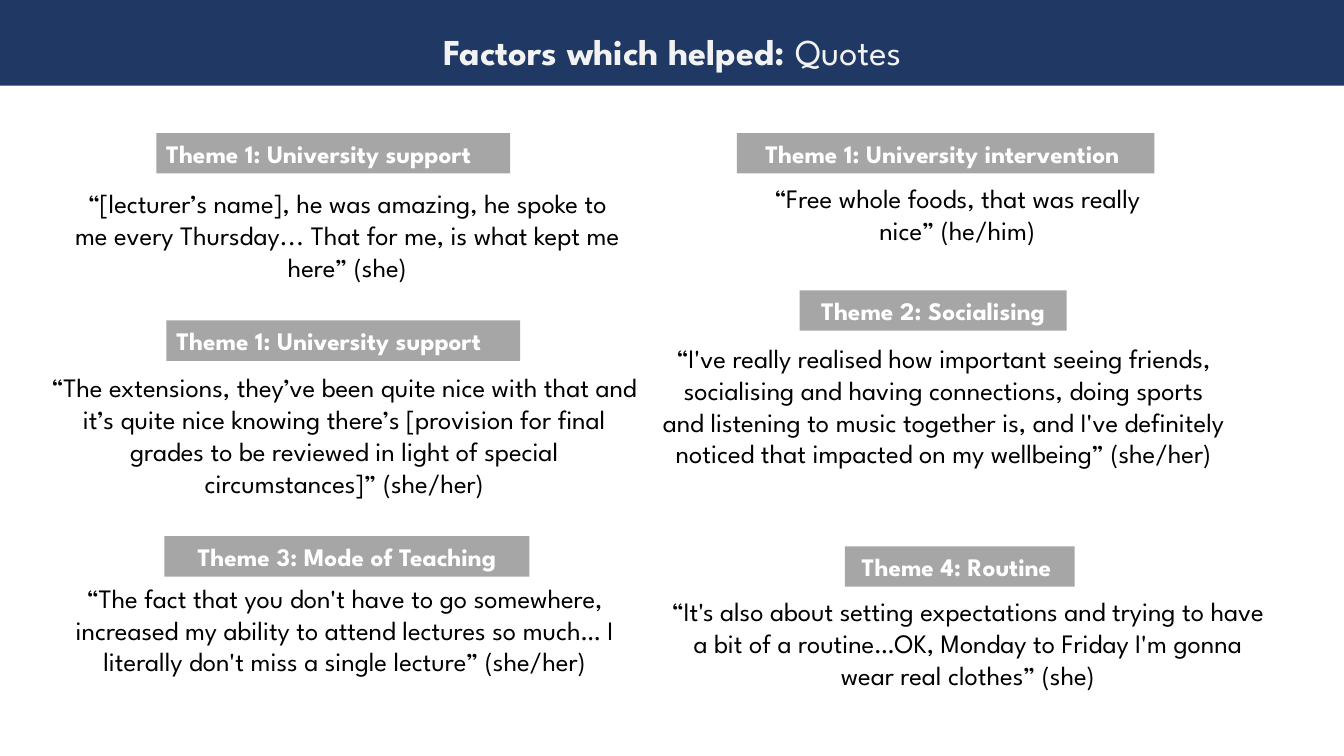
from pptx import Presentation
from pptx.dml.color import RGBColor
from pptx.enum.shapes import MSO_SHAPE
from pptx.enum.text import MSO_ANCHOR, MSO_AUTO_SIZE, PP_ALIGN
from pptx.util import Inches, Pt

RECTANGLE = MSO_SHAPE.RECTANGLE
TOP = MSO_ANCHOR.TOP
NO_AUTOFIT = MSO_AUTO_SIZE.NONE
LEFT, CENTER = PP_ALIGN.LEFT, PP_ALIGN.CENTER

NAVY = RGBColor(0x20, 0x38, 0x64)
GREY = RGBColor(0xA6, 0xA6, 0xA6)
PALE = RGBColor(0xF2, 0xF2, 0xF2)
WHITE = RGBColor(0xFF, 0xFF, 0xFF)
BLACK = RGBColor(0x00, 0x00, 0x00)
FONT = "League Spartan"


def write(frame, text, size, color, bold=False, align=CENTER, indent=0, after=0):
    frame.word_wrap = True
    frame.auto_size = NO_AUTOFIT
    frame.vertical_anchor = TOP
    paragraph = frame.paragraphs[0]
    paragraph.alignment = align
    paragraph.space_after = Pt(after)
    if indent:
        paragraph._p.get_or_add_pPr().set("marL", str(Inches(indent)))
    run = paragraph.add_run()
    run.text = text
    run.font.name = FONT
    run.font.size = Pt(size)
    run.font.bold = bold
    run.font.color.rgb = color


def add_block(left, top, width, height, fill):
    block = slide.shapes.add_shape(
        RECTANGLE, Inches(left), Inches(top), Inches(width), Inches(height))
    block.shadow.inherit = False
    block.fill.solid()
    block.fill.fore_color.rgb = fill
    block.line.fill.background()
    return block


prs = Presentation()
prs.slide_width = Inches(13.33)
prs.slide_height = Inches(7.5)
slide = prs.slides.add_slide(prs.slide_layouts[5])

title = slide.shapes.title
title.left, title.top = Inches(-0.35), Inches(0.24)
title.width, title.height = Inches(14.04), Inches(0.54)
write(title.text_frame, "Factors which helped: ", 26, PALE, bold=True)
write(title.text_frame, "Quotes", 26, PALE)

header_band = add_block(0, -0.14, 13.33, 0.99, NAVY)
title.element.addprevious(header_band.element)

themes = [
    ("Theme 1: University support", (1.55, 1.32, 3.51), LEFT,
     "“[lecturer’s name], he was amazing, he spoke to me every Thursday... "
     "That for me, is what kept me here” (she)",
     (0.11, 1.81, 6.18, 1.06), 0.49),
    ("Theme 1: University support", (1.65, 3.18, 3.51), LEFT,
     "“The extensions, they’ve been quite nice with that and it’s quite nice "
     "knowing there’s [provision for final grades to be reviewed in light of "
     "special circumstances]” (she/her)",
     (-0.11, 3.63, 6.56, 1.38), 0.49),
    ("Theme 3: Mode of Teaching", (1.63, 5.32, 3.62), CENTER,
     "“The fact that you don't have to go somewhere, increased my ability to "
     "attend lectures so much… I literally don't miss a single lecture” (she/her)",
     (-0.09, 5.72, 6.53, 1.38), 0.49),
    ("Theme 1: University intervention ", (7.31, 1.32, 4.14), CENTER,
     "“Free whole foods, that was really nice” (he/him)",
     (7.05, 1.76, 4.4, 0.74), 0.49),
    ("Theme 2: Socialising", (7.93, 2.88, 2.65), CENTER,
     "“I've really realised how important seeing friends, socialising and having "
     "connections, doing sports and listening to music together is, and I've "
     "definitely noticed that impacted on my wellbeing” (she/her)",
     (6.46, 3.34, 5.8, 1.7), 0),
    ("Theme 4: Routine ", (8.38, 5.42, 2.28), CENTER,
     "“It's also about setting expectations and trying to have a bit of a "
     "routine…OK, Monday to Friday I'm gonna wear real clothes” (she)",
     (6.03, 5.85, 6.65, 1.06), 0.49),
]

for theme, theme_place, theme_align, quote, quote_place, indent in themes:
    quote_box = slide.shapes.add_textbox(*[Inches(length) for length in quote_place])
    write(quote_box.text_frame, quote, 19, BLACK, indent=indent, after=8)
    label = add_block(*theme_place, 0.4, GREY)
    write(label.text_frame, theme, 18, WHITE, bold=True, align=theme_align)

prs.save("out.pptx")
